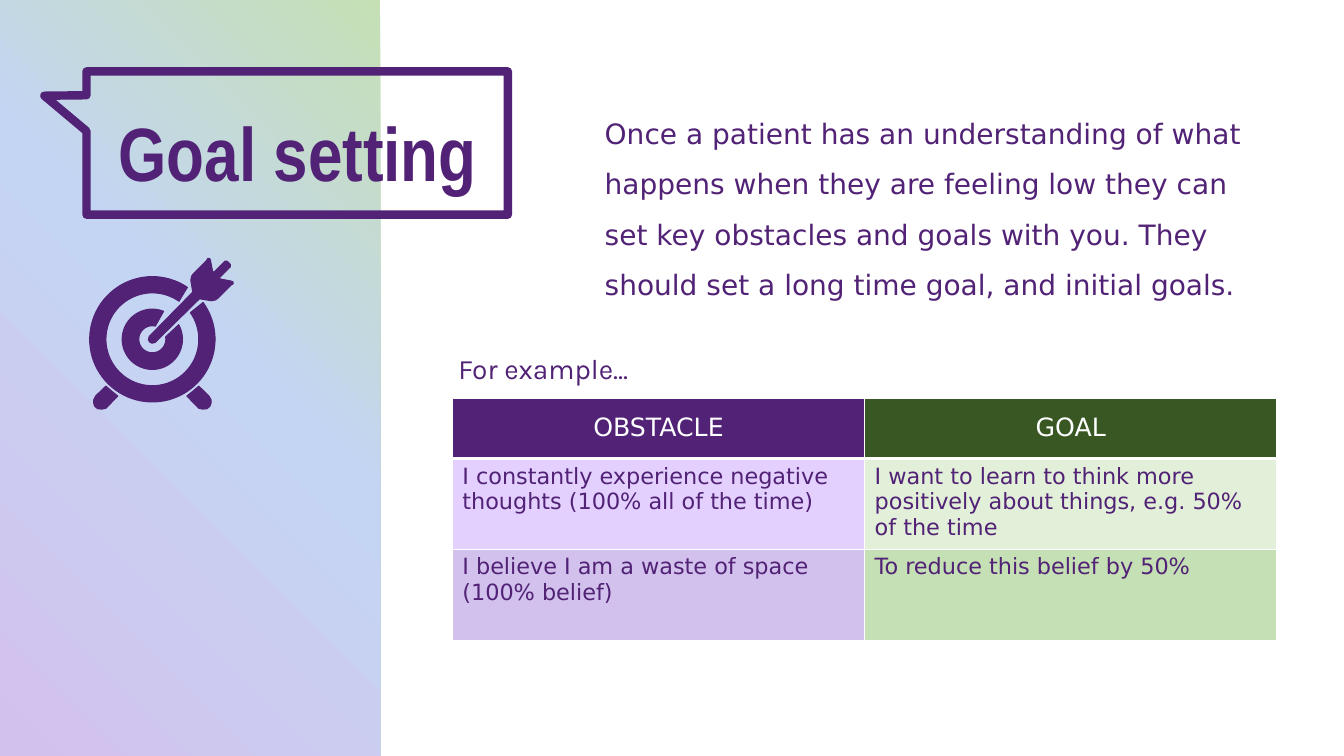
from dataclasses import dataclass
from math import cos, radians, sin

from lxml import etree
from pptx import Presentation
from pptx.dml.color import RGBColor
from pptx.enum.shapes import MSO_SHAPE
from pptx.enum.text import MSO_ANCHOR, MSO_AUTO_SIZE, PP_ALIGN
from pptx.oxml import parse_xml
from pptx.oxml.ns import nsdecls, qn
from pptx.util import Cm, Pt

PURPLE = RGBColor(0x51, 0x22, 0x75)
DARK_GREEN = RGBColor(0x38, 0x57, 0x23)
PALE_PURPLE = RGBColor(0xE3, 0xD0, 0xFF)
PALE_GREEN = RGBColor(0xE2, 0xF0, 0xD9)
LAVENDER = RGBColor(0xD3, 0xC1, 0xED)
SKY = RGBColor(0xC4, 0xD5, 0xF3)
GREEN = RGBColor(0xC5, 0xE0, 0xB4)
WHITE = RGBColor(0xFF, 0xFF, 0xFF)

BODY_FONT = "DejaVu Sans"
Point = tuple[float, float]


@dataclass
class TextBlock:
    text: str
    left: float
    top: float
    width: float
    height: float
    font: str
    size: float
    line_spacing: float
    bold: bool = False
    indent: float = 0


@dataclass
class Ring:
    outer_radius: float
    inner_radius: float
    outer_gap: tuple[int, int]
    inner_gap: tuple[int, int]


@dataclass
class TableCell:
    text: str
    fill: RGBColor


TEXT_BLOCKS = [
    TextBlock("Goal setting", 2.26, 2.08, 10.16, 3.02, "Arial Narrow", 54, 1.2, True, 0.48),
    TextBlock("Once a patient has an understanding of what happens when they are "
              "feeling low they can set key obstacles and goals with you. They should "
              "set a long time goal, and initial goals.",
              14.99, 2.39, 17.2, 5.38, BODY_FONT, 20, 1.5),
    TextBlock("For example...", 11.3, 8.31, 5.49, 1.42, "Karla", 20, 1.5),
]

TABLE_ROWS = [
    [TableCell("OBSTACLE", PURPLE), TableCell("GOAL", DARK_GREEN)],
    [TableCell("I constantly experience negative thoughts (100% all of the time)", PALE_PURPLE),
     TableCell("I want to learn to think more positively about things, e.g. 50% of the time",
               PALE_GREEN)],
    [TableCell("I believe I am a waste of space\n(100% belief)", LAVENDER),
     TableCell("To reduce this belief by 50%", GREEN)],
]
ROW_HEIGHTS = [1.52, 2.29, 2.29]

# Target icon: rings open towards the arrow, gaps in degrees
CENTRE_X, CENTRE_Y = 3.84, 8.55
RINGS = [Ring(1.58, 1.17, (36, 56), (35, 55)), Ring(0.76, 0.34, (29, 68), (10, 77))]
LEFT_FOOT = [(2.67, 9.73), (2.41, 9.98), (2.36, 10.08), (2.36, 10.16), (2.39, 10.24),
             (2.46, 10.3), (2.57, 10.31), (2.67, 10.29), (2.97, 9.98), (2.82, 9.86)]
# Upper half of the arrow, measured right and up from the target's centre
ARROW_HALF = [(1.94, 1.92), (1.88, 1.97), (1.83, 1.97), (1.78, 1.92), (1.55, 1.69),
              (1.52, 1.71), (1.47, 1.97), (1.45, 2.03), (1.4, 2.04), (1.37, 1.99),
              (1.04, 1.66), (0.99, 1.59), (0.97, 1.49), (1.02, 1.19), (-0.08, 0.07),
              (-0.1, -0.01), (-0.07, -0.07)]


def add_panel(slide) -> None:
    panel = slide.shapes.add_shape(MSO_SHAPE.RECTANGLE, 0, 0, Cm(9.58), Cm(19.05))
    panel.shadow.inherit = False
    panel.line.fill.background()
    stops = "".join(f'<a:gs pos="{position}"><a:srgbClr val="{color}"/></a:gs>'
                    for position, color in ((0, LAVENDER), (56000, SKY), (100000, GREEN)))
    gradient = parse_xml(
        f'<a:gradFill {nsdecls("a")} rotWithShape="1"><a:gsLst>{stops}</a:gsLst>'
        '<a:path path="circle"><a:fillToRect t="100000" r="100000"/></a:path></a:gradFill>')
    panel._element.spPr.find(qn("a:prstGeom")).addnext(gradient)


def add_callout(slide) -> None:
    callout = slide.shapes.add_shape(MSO_SHAPE.RECTANGULAR_CALLOUT,
                                     Cm(2.18), Cm(1.8), Cm(10.62), Cm(3.61))
    callout.adjustments[0], callout.adjustments[1] = -0.6, -0.33
    callout.shadow.inherit = False
    callout.fill.background()
    callout.line.color.rgb = PURPLE
    callout.line.width = Pt(6)


def add_text(slide, block: TextBlock) -> None:
    box = slide.shapes.add_textbox(Cm(block.left), Cm(block.top),
                                   Cm(block.width), Cm(block.height))
    frame = box.text_frame
    frame.word_wrap = True
    frame.auto_size = MSO_AUTO_SIZE.SHAPE_TO_FIT_TEXT
    frame.text = block.text
    paragraph = frame.paragraphs[0]
    paragraph.line_spacing = block.line_spacing
    if block.indent:
        paragraph._p.get_or_add_pPr().set("marL", str(Cm(block.indent)))
    font = paragraph.runs[0].font
    font.name, font.size, font.bold = block.font, Pt(block.size), block.bold
    font.color.rgb = PURPLE


def arc(radius: float, gap: tuple[int, int]) -> list[Point]:
    """Points round the target's centre, from the end of the gap to its start."""
    start, sweep, steps = gap[1], 360 - gap[1] + gap[0], 80
    angles = [radians(start + sweep * step / steps) for step in range(steps + 1)]
    return [(CENTRE_X + radius * cos(angle), CENTRE_Y - radius * sin(angle))
            for angle in angles]


def add_outline(group, points: list[Point]) -> None:
    corners = [(Cm(x), Cm(y)) for x, y in points]
    builder = group.shapes.build_freeform(*corners[0])
    builder.add_line_segments(corners[1:], close=True)
    shape = builder.convert_to_shape()
    shape.shadow.inherit = False
    shape.fill.solid()
    shape.fill.fore_color.rgb = PURPLE
    shape.line.color.rgb = PURPLE
    shape.line.width = Pt(0.75)


def add_target(slide) -> None:
    group = slide.shapes.add_group_shape()
    for ring in RINGS:
        inner = arc(ring.inner_radius, ring.inner_gap)
        add_outline(group, arc(ring.outer_radius, ring.outer_gap) + inner[::-1])
    add_outline(group, LEFT_FOOT)
    add_outline(group, [(2 * CENTRE_X - x, y) for x, y in LEFT_FOOT])
    arrow = ARROW_HALF + [(up, right) for right, up in reversed(ARROW_HALF)]
    add_outline(group, [(CENTRE_X + right, CENTRE_Y - up) for right, up in arrow])


def add_borders(cell, bottom_width: float) -> None:
    properties = cell._tc.get_or_add_tcPr()
    for side, width in (("L", 1), ("R", 1), ("T", 1), ("B", bottom_width)):
        line = etree.SubElement(properties, qn(f"a:ln{side}"), w=str(Pt(width)))
        fill = etree.SubElement(line, qn("a:solidFill"))
        etree.SubElement(fill, qn("a:srgbClr"), val=str(WHITE))


def add_goal_table(slide) -> None:
    table = slide.shapes.add_table(len(TABLE_ROWS), 2, Cm(11.4), Cm(10.03),
                                   Cm(20.78), Cm(sum(ROW_HEIGHTS))).table
    for row_index, row in enumerate(TABLE_ROWS):
        is_header = row_index == 0
        table.rows[row_index].height = Cm(ROW_HEIGHTS[row_index])
        for column_index, content in enumerate(row):
            cell = table.cell(row_index, column_index)
            add_borders(cell, 3 if is_header else 1)
            cell.fill.solid()
            cell.fill.fore_color.rgb = content.fill
            cell.vertical_anchor = MSO_ANCHOR.MIDDLE if is_header else MSO_ANCHOR.TOP
            cell.text_frame.text = content.text
            for paragraph in cell.text_frame.paragraphs:
                paragraph.alignment = PP_ALIGN.CENTER if is_header else PP_ALIGN.LEFT
                font = paragraph.runs[0].font
                font.name, font.bold = BODY_FONT, False
                font.size = Pt(18 if is_header else 16)
                font.color.rgb = WHITE if is_header else PURPLE


def main() -> None:
    presentation = Presentation()
    presentation.slide_width, presentation.slide_height = Cm(33.87), Cm(19.05)
    slide = presentation.slides.add_slide(presentation.slide_layouts[6])
    add_panel(slide)
    add_callout(slide)
    add_target(slide)
    add_goal_table(slide)
    for block in TEXT_BLOCKS:
        add_text(slide, block)
    presentation.save("out.pptx")


if __name__ == "__main__":
    main()
